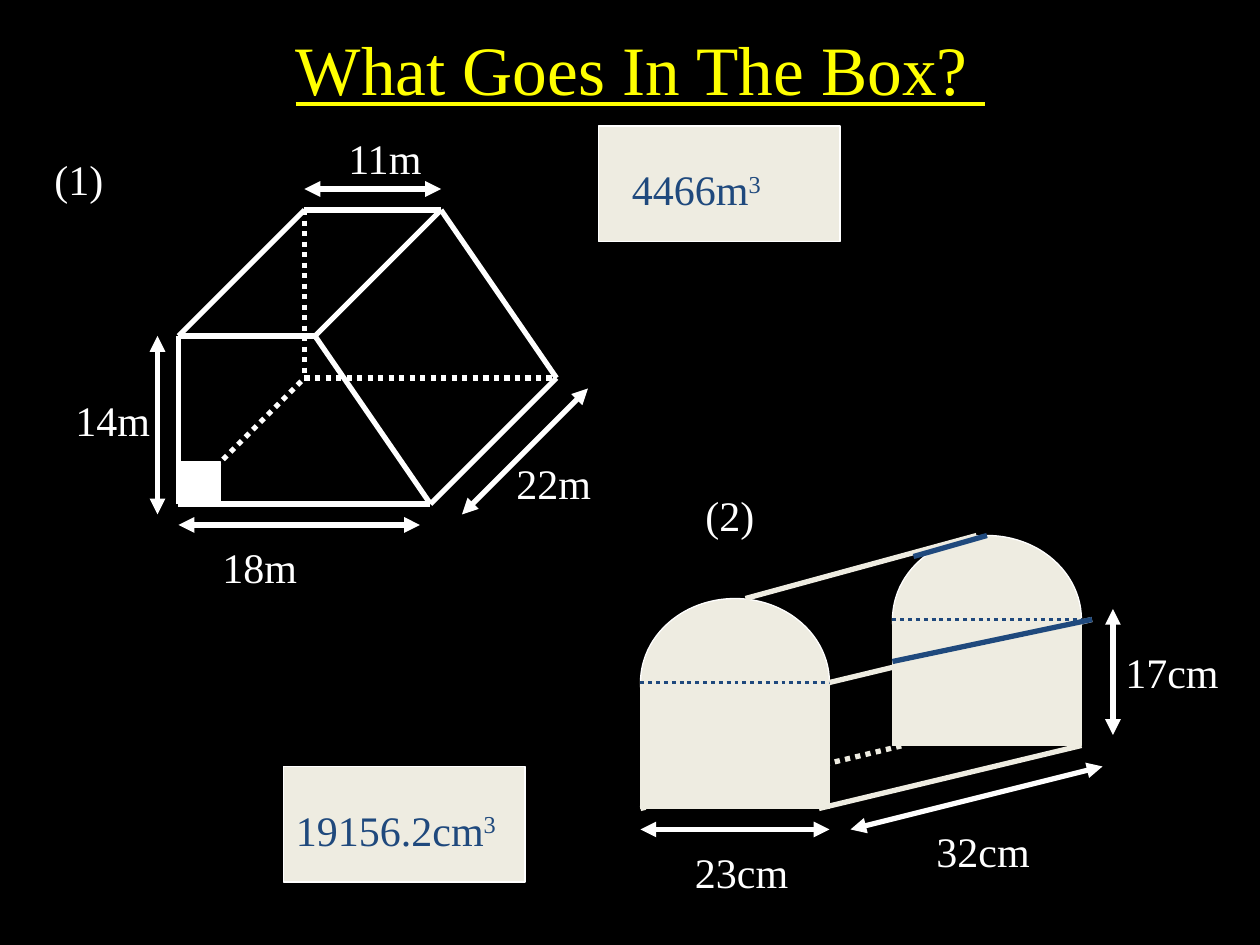
from dataclasses import dataclass
from typing import Any

from lxml.etree import SubElement
from pptx import Presentation
from pptx.dml.color import RGBColor as Rgb
from pptx.enum.dml import MSO_LINE as Dash
from pptx.enum.shapes import MSO_CONNECTOR as Conn, MSO_SHAPE as Kind
from pptx.enum.text import MSO_ANCHOR as Anchor, PP_ALIGN as Align
from pptx.oxml.ns import qn
from pptx.util import Pt

COLORS = {"black": "000000", "white": "FFFFFF", "yellow": "FFFF00",
          "cream": "EEECE1", "navy": "1F497D"}
FONT = "Times New Roman"


@dataclass
class Line:
    """A straight line between two points."""
    start: tuple[float, float]
    end: tuple[float, float]
    color: str = "white"
    width: float = 3
    dots: bool = False
    heads: bool = False


@dataclass
class Label:
    """A line of text with an optional raised ending."""
    text: str
    left: float
    top: float
    width: float
    color: str = "white"
    power: str = ""
    size: float = 24
    height: float = 36


@dataclass
class Block:
    """A filled shape with an outline."""
    kind: Any
    left: float
    top: float
    width: float
    height: float
    fill: str = "cream"
    edge: str = "white"


def hue(name: str) -> Rgb:
    """Return a named colour."""
    return Rgb.from_string(COLORS[name])


def draw_line(shapes: Any, line: Line) -> None:
    """Draw a line, dotted or with arrowheads if asked."""
    item = shapes.add_connector(Conn.STRAIGHT, *map(Pt, line.start + line.end))
    item.line.color.rgb = hue(line.color)
    item.line.width = Pt(line.width)
    if line.dots:
        item.line.dash_style = Dash.ROUND_DOT
    props = item._element.spPr
    if line.heads:
        for end in ("a:headEnd", "a:tailEnd"):
            SubElement(props.find(qn("a:ln")), qn(end), type="triangle")
    SubElement(props, qn("a:effectLst"))


def draw_block(shapes: Any, block: Block) -> None:
    """Draw a filled shape."""
    item = shapes.add_shape(block.kind, Pt(block.left), Pt(block.top),
                            Pt(block.width), Pt(block.height))
    item.shadow.inherit = False
    item.fill.solid()
    item.fill.fore_color.rgb = hue(block.fill)
    item.line.color.rgb = hue(block.edge)
    item.line.width = Pt(0.75)


def draw_label(shapes: Any, label: Label) -> Any:
    """Draw a text box and return its text frame."""
    box = shapes.add_textbox(Pt(label.left), Pt(label.top),
                             Pt(label.width), Pt(label.height))
    frame = box.text_frame
    frame.word_wrap = True
    frame.text = label.text
    para = frame.paragraphs[0]
    if label.power:
        run = para.add_run()
        run.text = label.power
        run._r.get_or_add_rPr().set("baseline", "30000")
    for run in para.runs:
        run.font.name = FONT
        run.font.size = Pt(label.size)
        run.font.color.rgb = hue(label.color)
    return frame


def draw_title(shapes: Any) -> None:
    """Draw the underlined heading."""
    frame = draw_label(shapes, Label("What Goes In The Box? ", 60, 18, 612,
                                     "yellow", size=39.6, height=42))
    frame.vertical_anchor = Anchor.MIDDLE
    para = frame.paragraphs[0]
    para.alignment = Align.CENTER
    para.runs[0].font.underline = True


def draw_prism(shapes: Any) -> None:
    """Draw the first solid with its sizes."""
    front = [(102, 288), (246, 288), (180, 192), (102, 192)]
    back = [(x + 72, y - 72) for x, y in front]
    for i in range(4):
        j = (i + 1) % 4
        draw_line(shapes, Line(front[i], front[j]))
        draw_line(shapes, Line(front[i], back[i], dots=i == 0))
        draw_line(shapes, Line(back[i], back[j], dots=0 in (i, j)))
    draw_block(shapes, Block(Kind.RECTANGLE, 102, 264, 24, 24, "white"))
    for start, end in [((102, 300), (240, 300)), ((264, 294), (336, 222)),
                       ((174, 108), (252, 108)), ((90, 192), (90, 294))]:
        draw_line(shapes, Line(start, end, heads=True))
    for label in [Label("18m", 120, 306, 60), Label("22m", 288, 258, 60),
                  Label("14m", 36, 222, 66), Label("11m", 192, 72, 72),
                  Label("(1)", 24, 84, 54)]:
        draw_label(shapes, label)


def draw_arch(shapes: Any, left: float, top: float) -> None:
    """Draw one arched end face."""
    base = top + 48
    draw_block(shapes, Block(Kind.OVAL, left, top, 108, 96))
    draw_block(shapes, Block(Kind.RECTANGLE, left, base, 108, 72, edge="cream"))
    draw_line(shapes, Line((left, base), (left + 108, base), "navy", 2.25, dots=True))


def draw_vault(shapes: Any) -> None:
    """Draw the second solid with its sizes."""
    draw_arch(shapes, 366, 342)
    draw_arch(shapes, 510, 306)
    for line in [Line((468, 462), (618, 426), "cream"),
                 Line((474, 390), (624, 354), "cream"),
                 Line((510, 378), (624, 354), "navy"),
                 Line((426, 342), (558, 306), "cream"),
                 Line((366, 462), (516, 426), "cream", dots=True),
                 Line((522, 318), (564, 306), "navy"),
                 Line((366, 474), (474, 474), heads=True),
                 Line((486, 474), (630, 438), heads=True),
                 Line((636, 348), (636, 420), heads=True)]:
        draw_line(shapes, line)
    for label in [Label("23cm", 390, 480, 84), Label("32cm", 528, 468, 84),
                  Label("17cm", 636, 366, 72), Label("(2)", 396, 276, 48)]:
        draw_label(shapes, label)


def main() -> None:
    """Build and save the slide."""
    deck = Presentation()
    deck.slide_width, deck.slide_height = Pt(720), Pt(540)
    slide = deck.slides.add_slide(deck.slide_layouts[6])
    slide.background.fill.solid()
    slide.background.fill.fore_color.rgb = hue("black")
    shapes = slide.shapes
    draw_title(shapes)
    draw_prism(shapes.add_group_shape().shapes)
    draw_vault(shapes.add_group_shape().shapes)
    for left, top in [(342, 72), (162, 438)]:
        draw_block(shapes, Block(Kind.RECTANGLE, left, top, 138, 66))
    draw_label(shapes, Label("4466m", 354, 90, 120, "navy", "3"))
    draw_label(shapes, Label("19156.2cm", 162, 456, 138, "navy", "3"))
    deck.save("out.pptx")


if __name__ == "__main__":
    main()
